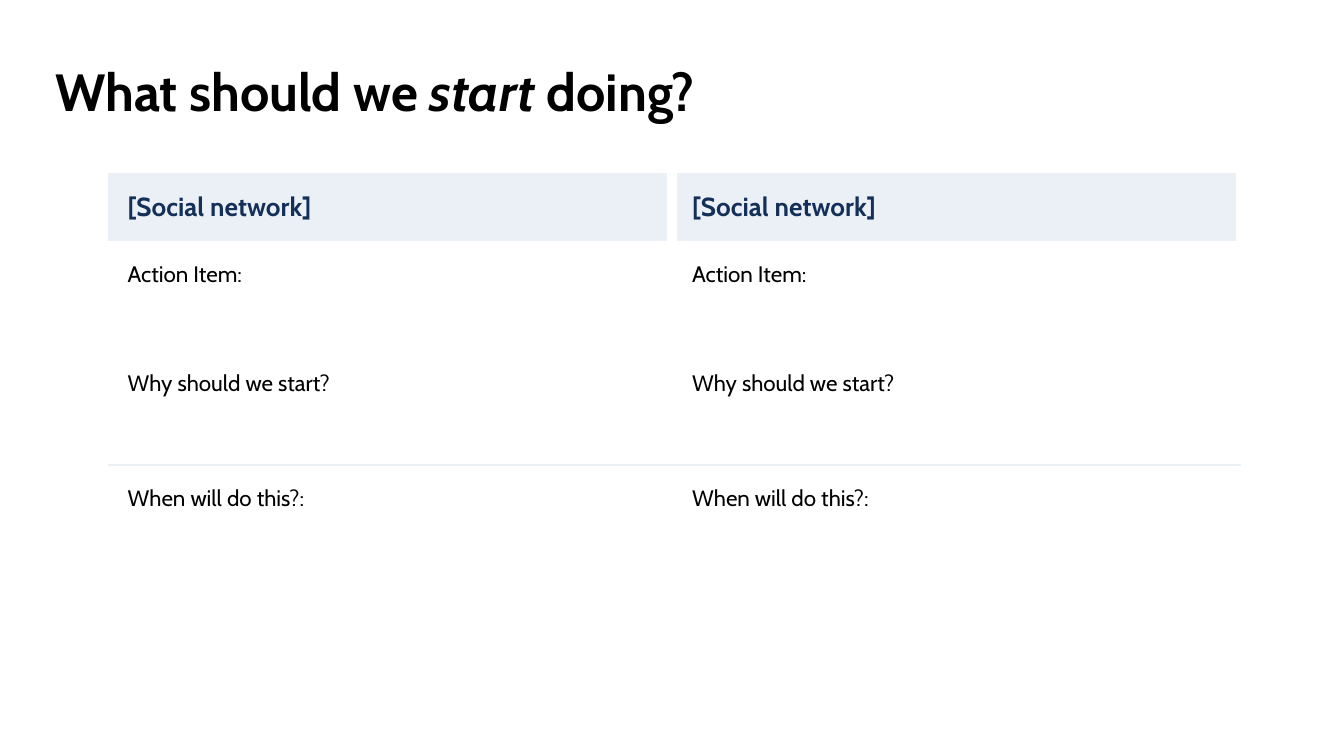
from pptx import Presentation
from pptx.dml.color import RGBColor
from pptx.enum.text import MSO_ANCHOR as Anchor, MSO_AUTO_SIZE as AutoSize, PP_ALIGN as Align
from pptx.oxml import parse_xml
from pptx.oxml.ns import nsdecls
from pptx.util import Inches, Pt

FONT = "Cabin"
BLACK = RGBColor(0x00, 0x00, 0x00)
WHITE = RGBColor(0xFF, 0xFF, 0xFF)
NAVY = RGBColor(0x14, 0x30, 0x59)
PALE_BLUE = RGBColor(0xEA, 0xF0, 0xF5)

SLIDE_WIDTH = 10
SLIDE_HEIGHT = SLIDE_WIDTH * 9 / 16
TITLE_BOX = (0.35, 0.39, 8.35, 0.59)
TABLE_BOX = (0.8, 1.29, 8.4, 3.84)
HEADER_HEIGHT = 0.5
TITLE_PARTS = [("What should we ", False), ("start", True), (" doing?", False)]
ROWS = [
    ["[Social network]"],
    ["Action Item:", "Why should we start?"],
    ["When will do this?:"],
]
COLUMN_COUNT = 2
QUESTION_GAP = Pt(44)
GUTTER = (WHITE, 6)
RULE = (PALE_BLUE, 0.75)


def style_run(run, size, color, bold=False, italic=False):
    font = run.font
    font.name, font.size, font.bold, font.italic = FONT, Pt(size), bold, italic
    font.color.rgb = color


def set_margins(target, left, top, right, bottom):
    target.margin_left, target.margin_top = Inches(left), Inches(top)
    target.margin_right, target.margin_bottom = Inches(right), Inches(bottom)


def set_borders(cell, borders):
    """Draw the given sides (L, R, T, B) and clear the others."""
    properties = cell._tc.get_or_add_tcPr()
    for side in "LRTB":
        color, width = borders.get(side, (None, 0))
        paint = (f'<a:solidFill><a:srgbClr val="{color}"/></a:solidFill>'
                 if color is not None else "<a:noFill/>")
        properties.append(parse_xml(
            f'<a:ln{side} {nsdecls("a")} w="{Pt(width)}">{paint}</a:ln{side}>'))


def add_title(slide, box):
    title = slide.shapes.title
    title.left, title.top, title.width, title.height = map(Inches, box)
    frame = title.text_frame
    frame.word_wrap = True
    frame.auto_size = AutoSize.NONE
    frame.vertical_anchor = Anchor.TOP
    set_margins(frame, 0.06, 0.1, 0.1, 0.1)
    paragraph = frame.paragraphs[0]
    paragraph.alignment = Align.LEFT
    paragraph.line_spacing = 0.9
    for text, italic in TITLE_PARTS:
        run = paragraph.add_run()
        run.text = text
        style_run(run, 28, BLACK, bold=True, italic=italic)


def fill_cell(cell, lines, is_header):
    set_margins(cell, 0.15, 0.1 if is_header else 0.15, 0.15, 0.1)
    cell.vertical_anchor = Anchor.MIDDLE if is_header else Anchor.TOP
    cell.text_frame.text = "\n".join(lines)
    for index, paragraph in enumerate(cell.text_frame.paragraphs):
        if index:
            paragraph.space_before = QUESTION_GAP
        size, color = (14, NAVY) if is_header else (12, BLACK)
        style_run(paragraph.runs[0], size, color, bold=is_header)


def choose_borders(row_index, is_last_column):
    """White gutter between the headers and at the body's right edge, a thin rule between body rows."""
    if row_index == 0:
        return {"L" if is_last_column else "R": GUTTER}
    borders = {"B" if row_index == 1 else "T": RULE}
    if is_last_column:
        borders["R"] = GUTTER
    return borders


def add_action_table(slide, box):
    left, top, width, height = box
    table = slide.shapes.add_table(
        len(ROWS), COLUMN_COUNT, *map(Inches, box)).table
    table.horz_banding = table.first_row = False

    # Equal columns; the body rows share the height below the header
    for column in table.columns:
        column.width = Inches(width / COLUMN_COUNT)
    body_height = (height - HEADER_HEIGHT) / (len(ROWS) - 1)
    for index, row in enumerate(table.rows):
        row.height = Inches(body_height if index else HEADER_HEIGHT)

    # Cell text, borders and fills
    for row_index, lines in enumerate(ROWS):
        for column_index in range(COLUMN_COUNT):
            cell = table.cell(row_index, column_index)
            is_header = row_index == 0
            fill_cell(cell, lines, is_header)
            set_borders(cell, choose_borders(row_index, column_index == COLUMN_COUNT - 1))
            if is_header:
                cell.fill.solid()
                cell.fill.fore_color.rgb = PALE_BLUE
            else:
                cell.fill.background()


def main():
    presentation = Presentation()
    presentation.slide_width = Inches(SLIDE_WIDTH)
    presentation.slide_height = Inches(SLIDE_HEIGHT)
    slide = presentation.slides.add_slide(presentation.slide_layouts[5])
    add_title(slide, TITLE_BOX)
    add_action_table(slide, TABLE_BOX)
    presentation.save("out.pptx")


if __name__ == "__main__":
    main()
